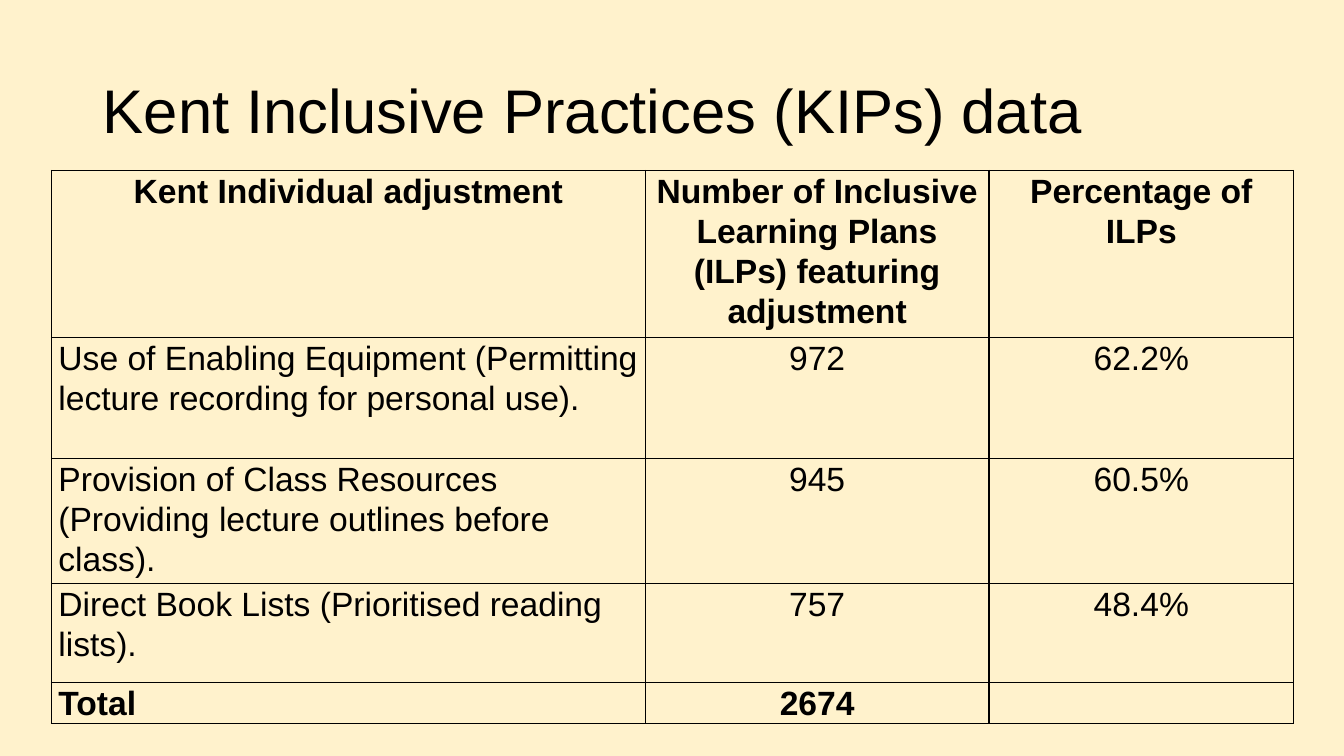
"""Build the slide with the table of Kent Inclusive Practices data."""
import pptx
import pptx.dml.color
import pptx.enum.text
import pptx.oxml
import pptx.oxml.ns
import pptx.util

Inches = pptx.util.Inches
Pt = pptx.util.Pt
ALIGN = pptx.enum.text.PP_ALIGN
ANCHOR = pptx.enum.text.MSO_ANCHOR
INK = "000000"
PAPER = "FFF2CC"


def colour(value):
    return pptx.dml.color.RGBColor.from_string(value)


def style(para, size, bold, align, spacing):
    formats = {"name": "Arial", "size": Pt(size), "bold": bold}
    for name, value in formats.items():
        setattr(para.font, name, value)
    para.font.color.rgb = colour(INK)
    para.alignment = align
    para.line_spacing = spacing


deck = pptx.Presentation()
deck.slide_width = Inches(13.33)
deck.slide_height = Inches(7.5)
page = deck.slides.add_slide(deck.slide_layouts.get_by_name("Title Only"))
page.background.fill.solid()
page.background.fill.fore_color.rgb = colour(PAPER)

title = page.shapes.title
title_place = {"left": 0.92, "top": 0.4, "width": 11.5, "height": 1.45}
for name, value in title_place.items():
    setattr(title, name, Inches(value))
title.text_frame.text = "Kent Inclusive Practices (KIPs) data"
title.text_frame.vertical_anchor = ANCHOR.MIDDLE
style(title.text_frame.paragraphs[0], 44, False, ALIGN.LEFT, 0.9)

rows = [
    ("Kent Individual adjustment",
     "Number of Inclusive Learning Plans (ILPs) featuring adjustment",
     "Percentage of ILPs"),
    ("Use of Enabling Equipment (Permitting lecture recording for personal use).",
     "972", "62.2%"),
    ("Provision of Class Resources (Providing lecture outlines before class).",
     "945", "60.5%"),
    ("Direct Book Lists (Prioritised reading lists).", "757", "48.4%"),
    ("Total", "2674", ""),
]
column_widths = [5.89, 3.41, 3.02]
row_heights = [1.66, 1.2, 1.24, 0.98, 0.41]
cell_format = {
    "margin_left": Inches(0.07),
    "margin_right": Inches(0.07),
    "margin_top": 0,
    "margin_bottom": 0,
    "vertical_anchor": ANCHOR.TOP,
}
border_xml = (
    "<a:{side} {namespace} w='12700'><a:solidFill><a:srgbClr val='{ink}'/>"
    "</a:solidFill></a:{side}>"
)

table = page.shapes.add_table(
    len(rows), len(column_widths), Inches(0.51), Inches(1.69),
    Inches(sum(column_widths)), Inches(sum(row_heights)),
).table
table.first_row = False
table.horz_banding = False
for column, width in zip(table.columns, column_widths):
    column.width = Inches(width)
for row, height in zip(table.rows, row_heights):
    row.height = Inches(height)

for row_index, texts in enumerate(rows):
    is_header = row_index == 0
    is_bold = is_header or row_index == len(rows) - 1
    for column_index, text in enumerate(texts):
        cell = table.cell(row_index, column_index)
        for name, value in cell_format.items():
            setattr(cell, name, value)
        cell.text = text
        is_label = column_index == 0 and not is_header
        align = ALIGN.LEFT if is_label else ALIGN.CENTER
        style(cell.text_frame.paragraphs[0], 24, is_bold, align, 1.07)
        cell.fill.background()
        properties = cell._tc.get_or_add_tcPr()
        for position, side in enumerate(("lnL", "lnR", "lnT", "lnB")):
            border = border_xml.format(
                side=side, namespace=pptx.oxml.ns.nsdecls("a"), ink=INK)
            properties.insert(position, pptx.oxml.parse_xml(border))

deck.save("out.pptx")
